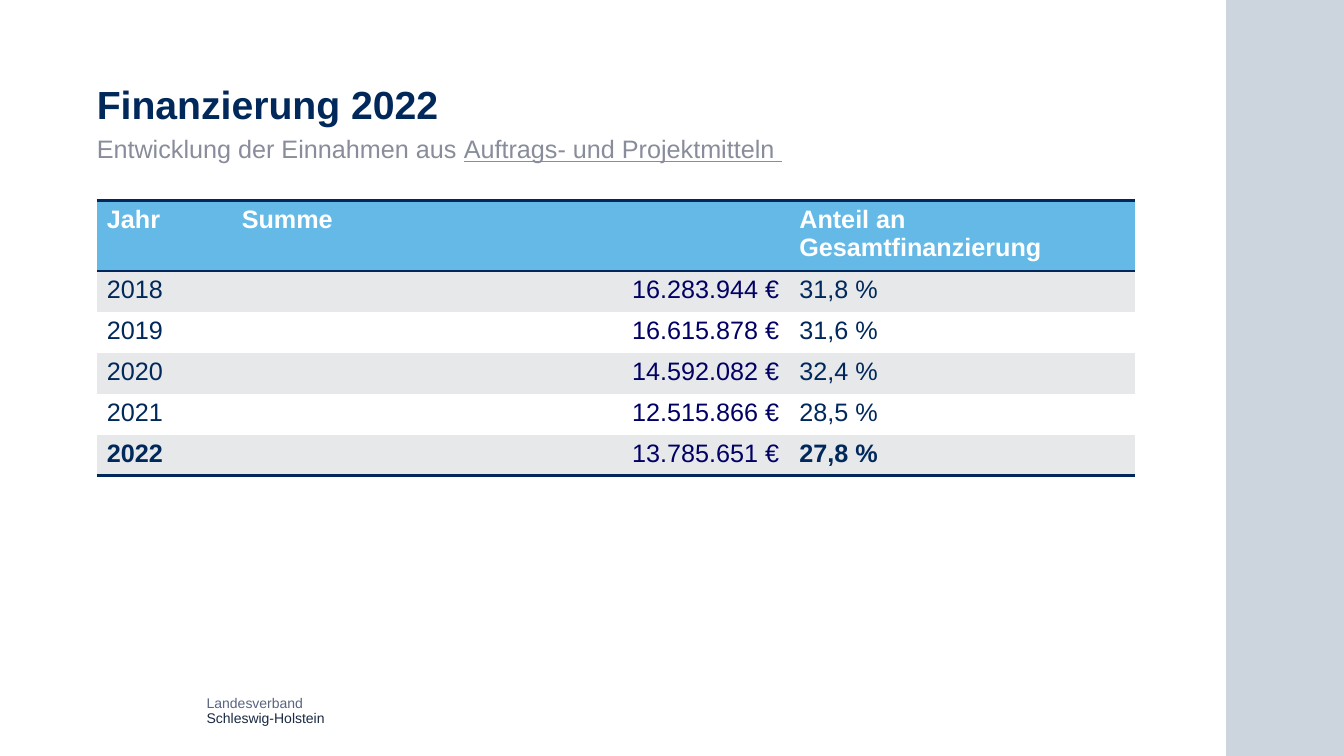
"""Build the slide on project funding in 2022."""
import lxml.etree
import pptx
import pptx.dml.color
import pptx.enum.shapes
import pptx.enum.text
import pptx.oxml.ns
import pptx.util
from pptx.util import Cm

COLOURS = {
    "navy": "00285A", "amount": "000065", "subtitle": "898D9B",
    "header": "64B9E6", "band": "E7E8EA", "white": "FFFFFF",
    "footer": "586481", "footer_dark": "1A2943",
}
FONT = "Arial"
LEFT, WIDTH = 2.44, 26.16
COLUMN_WIDTHS = (3.4, 14.05, 8.71)
HEADER_HEIGHT, ROW_HEIGHT = 1.68, 1.03
ROWS = (
    ("Jahr", "Summe", "Anteil an Gesamtfinanzierung"),
    ("2018", "16.283.944 €", "31,8 %"),
    ("2019", "16.615.878 €", "31,6 %"),
    ("2020", "14.592.082 €", "32,4 %"),
    ("2021", "12.515.866 €", "28,5 %"),
    ("2022", "13.785.651 €", "27,8 %"),
)


def colour(name):
    """Return the named colour."""
    return pptx.dml.color.RGBColor.from_string(COLOURS[name])


def add_run(paragraph, text, *, size=18, fill="navy", bold=False, underline=False):
    """Append formatted text to a paragraph."""
    run = paragraph.add_run()
    run.text = text
    font = run.font
    font.name, font.size = FONT, pptx.util.Pt(size)
    font.bold, font.underline = bold, underline
    font.color.rgb = colour(fill)


def add_box(slide, top, height, *, left=LEFT, width=WIDTH, anchor="TOP"):
    """Add a text box without insets and return its text frame."""
    box = slide.shapes.add_textbox(Cm(left), Cm(top), Cm(width), Cm(height))
    frame = box.text_frame
    frame.word_wrap = True
    frame.vertical_anchor = pptx.enum.text.MSO_ANCHOR[anchor]
    frame.margin_left = frame.margin_right = 0
    frame.margin_top = frame.margin_bottom = 0
    return frame


def add_headings(slide):
    """Add the title and the subtitle."""
    title = add_box(slide, 1.09, 2.13, anchor="BOTTOM").paragraphs[0]
    add_run(title, "Finanzierung 2022", size=28, bold=True)
    subtitle = add_box(slide, 3.45, 0.76).paragraphs[0]
    add_run(subtitle, "Entwicklung der Einnahmen aus ", fill="subtitle")
    add_run(subtitle, "Auftrags- und Projektmitteln ", fill="subtitle", underline=True)
    for paragraph in (title, subtitle):
        paragraph.line_spacing = 0.9


def add_footer(slide):
    """Add the two-line name of the association."""
    frame = add_box(slide, 17.45, 0.86, left=5.21, width=6.32, anchor="BOTTOM")
    lines = (("Landesverband", "footer"), ("Schleswig-Holstein", "footer_dark"))
    for index, (text, fill) in enumerate(lines):
        paragraph = frame.add_paragraph() if index else frame.paragraphs[0]
        paragraph.line_spacing = pptx.util.Pt(11)
        add_run(paragraph, text, size=10, fill=fill)


def add_side_band(slide, presentation):
    """Add the translucent band along the right edge."""
    left = Cm(30.9)
    band = slide.shapes.add_shape(
        pptx.enum.shapes.MSO_SHAPE.RECTANGLE, left, 0,
        presentation.slide_width - left, presentation.slide_height)
    band.shadow.inherit = False
    band.line.fill.background()
    band.fill.solid()
    band.fill.fore_color.rgb = colour("navy")
    tint = band.fill._xPr.find(".//" + pptx.oxml.ns.qn("a:srgbClr"))
    lxml.etree.SubElement(tint, pptx.oxml.ns.qn("a:alpha"), val="20000")


def set_borders(cell, ruled_edges):
    """Rule the given edges of a cell and clear the others."""
    qn = pptx.oxml.ns.qn
    properties = cell._tc.get_or_add_tcPr()
    for edge in "LRTB":
        line = lxml.etree.SubElement(
            properties, qn(f"a:ln{edge}"), w=str(pptx.util.Pt(2)))
        if edge in ruled_edges:
            fill = lxml.etree.SubElement(line, qn("a:solidFill"))
            lxml.etree.SubElement(fill, qn("a:srgbClr"), val=COLOURS["navy"])
        else:
            lxml.etree.SubElement(line, qn("a:noFill"))


def fill_cell(cell, text, row, column):
    """Write and format one cell by its place in the table."""
    header, last = row == 0, row == len(ROWS) - 1
    is_amount = column == 1 and not header
    set_borders(cell, ("T" if row < 2 else "") + ("B" if header or last else ""))
    cell.fill.solid()
    cell.fill.fore_color.rgb = colour(
        "header" if header else "band" if row % 2 else "white")
    paragraph = cell.text_frame.paragraphs[0]
    if is_amount:
        paragraph.alignment = pptx.enum.text.PP_ALIGN.RIGHT
    add_run(paragraph, text,
            fill="white" if header else "amount" if is_amount else "navy",
            bold=header or (last and not is_amount))


def add_funding_table(slide):
    """Add the table of yearly sums and shares."""
    height = HEADER_HEIGHT + ROW_HEIGHT * (len(ROWS) - 1)
    table = slide.shapes.add_table(
        len(ROWS), len(COLUMN_WIDTHS), Cm(LEFT), Cm(5.05), Cm(WIDTH), Cm(height)).table
    table.horz_banding = False
    for column, width in zip(table.columns, COLUMN_WIDTHS):
        column.width = Cm(width)
    for row, texts in enumerate(ROWS):
        table.rows[row].height = Cm(ROW_HEIGHT if row else HEADER_HEIGHT)
        for column, text in enumerate(texts):
            fill_cell(table.cell(row, column), text, row, column)


def main():
    """Build and save the presentation."""
    presentation = pptx.Presentation()
    presentation.slide_width, presentation.slide_height = Cm(33.87), Cm(19.05)
    slide = presentation.slides.add_slide(presentation.slide_layouts[6])
    add_footer(slide)
    add_side_band(slide, presentation)
    add_headings(slide)
    add_funding_table(slide)
    presentation.save("out.pptx")


if __name__ == "__main__":
    main()
